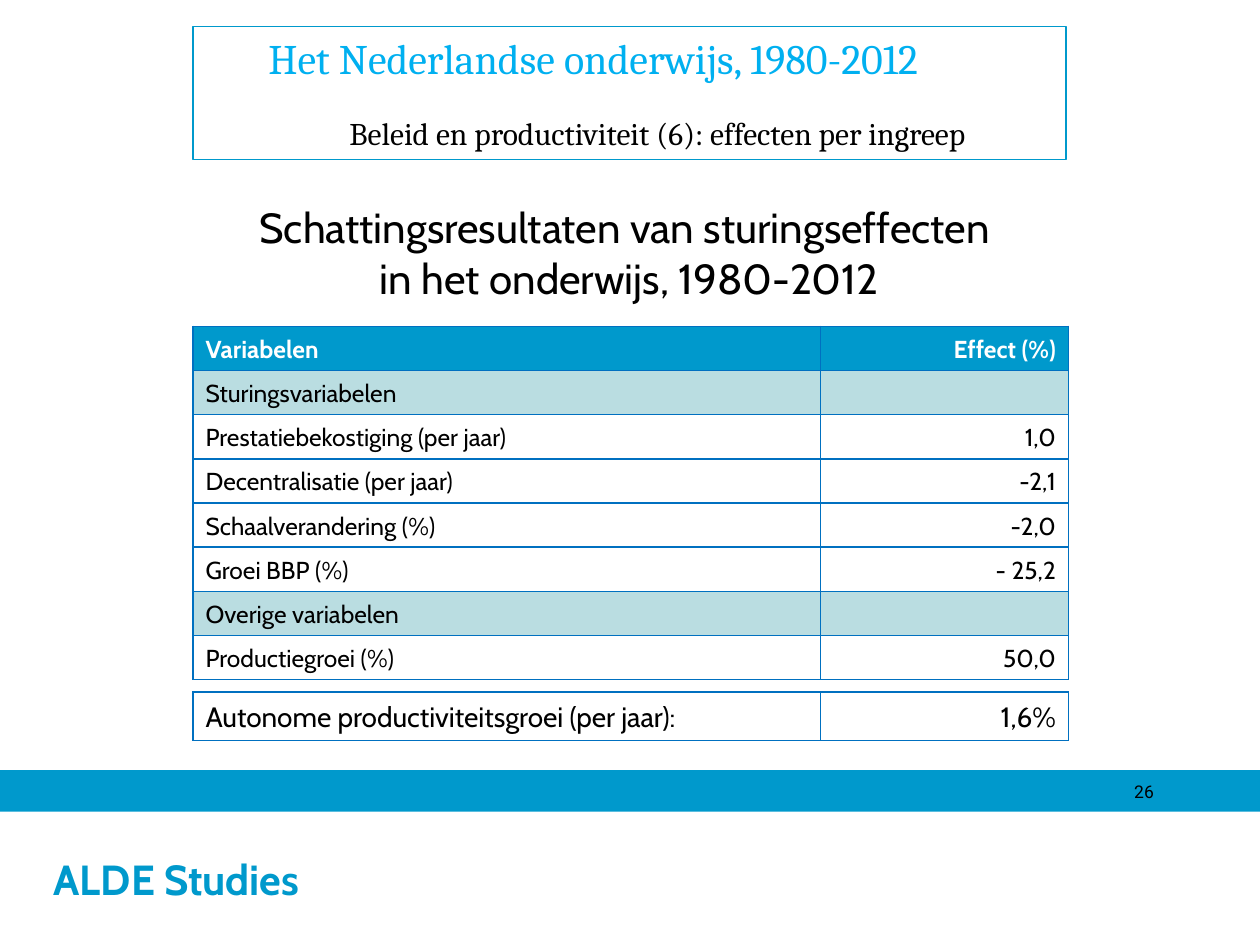
"""Build the slide on steering effects in Dutch education."""
from lxml import etree
from pptx import Presentation
from pptx.dml.color import RGBColor
from pptx.enum.shapes import MSO_SHAPE
from pptx.enum.text import MSO_ANCHOR, MSO_AUTO_SIZE, PP_ALIGN
from pptx.oxml.ns import qn
from pptx.util import Cm, Pt

RECTANGLE = MSO_SHAPE.RECTANGLE
MIDDLE, BOTTOM = MSO_ANCHOR.MIDDLE, MSO_ANCHOR.BOTTOM
LEFT, CENTER, RIGHT = PP_ALIGN.LEFT, PP_ALIGN.CENTER, PP_ALIGN.RIGHT
GROW = MSO_AUTO_SIZE.SHAPE_TO_FIT_TEXT

BLUE = RGBColor(0x00, 0x99, 0xCC)
SKY = RGBColor(0x00, 0xB0, 0xF0)
BORDER = RGBColor(0x00, 0x70, 0xC0)
PALE = RGBColor(0xBA, 0xDD, 0xE1)
BLACK = RGBColor(0x00, 0x00, 0x00)
WHITE = RGBColor(0xFF, 0xFF, 0xFF)

TITLE = "Het Nederlandse onderwijs, 1980-2012"
SUBTITLE = "Beleid en productiviteit (6): effecten per ingreep "
CAPTION = [
    "Schattingsresultaten van sturingseffecten ",
    "in het onderwijs, 1980-2012",
]
EFFECTS = [
    ("Variabelen", "Effect (%)"),
    ("Sturingsvariabelen", ""),
    ("Prestatiebekostiging (per jaar)", "1,0"),
    ("Decentralisatie (per jaar)", "-2,1"),
    ("Schaalverandering (%)", "-2,0"),
    ("Groei BBP (%)", "- 25,2"),
    ("Overige variabelen", ""),
    ("Productiegroei (%)", "50,0"),
]
GROWTH = [("Autonome productiviteitsgroei (per jaar):", "1,6%")]
INSTITUTE = "ALDE Studies"
PAGE = "26"

SLIDE_WIDTH, SLIDE_HEIGHT = 25.4, 19.05
CONTENT_LEFT, CONTENT_WIDTH = 3.89, 17.6
COLUMN_WIDTHS = (12.65, 5)


def add_run(paragraph, text, size, font, color, bold=False):
    run = paragraph.add_run()
    run.text = text
    run.font.size = Pt(size)
    run.font.name = font
    run.font.bold = bold
    run.font.color.rgb = color


def add_band(slide, top, height, color, outlined=True):
    shape = slide.shapes.add_shape(RECTANGLE, 0, Cm(top), Cm(SLIDE_WIDTH), Cm(height))
    shape.shadow.inherit = False
    shape.fill.solid()
    shape.fill.fore_color.rgb = color
    if outlined:
        shape.line.color.rgb = color
        shape.line.width = Pt(0.75)
    else:
        shape.line.fill.background()
    return shape


def add_text_box(slide, left, top, width, height):
    box = slide.shapes.add_textbox(Cm(left), Cm(top), Cm(width), Cm(height))
    box.text_frame.word_wrap = True
    return box


def set_borders(cell):
    properties = cell._tc.get_or_add_tcPr()
    for position, side in enumerate(("a:lnL", "a:lnR", "a:lnT", "a:lnB")):
        line = etree.Element(qn(side), w=str(Pt(1)))
        fill = etree.SubElement(line, qn("a:solidFill"))
        etree.SubElement(fill, qn("a:srgbClr"), val=str(BORDER))
        properties.insert(position, line)


def add_table(slide, rows, top, row_height, size, has_header):
    frame = slide.shapes.add_table(
        len(rows), len(COLUMN_WIDTHS), Cm(CONTENT_LEFT), Cm(top),
        Cm(sum(COLUMN_WIDTHS)), Cm(row_height * len(rows)))
    table = frame.table
    table.first_row = has_header
    table.horz_banding = False
    for column, width in zip(table.columns, COLUMN_WIDTHS):
        column.width = Cm(width)
    for row_index, values in enumerate(rows):
        table.rows[row_index].height = Cm(row_height)
        is_header = has_header and row_index == 0
        is_group = not values[1]
        for column_index, text in enumerate(values):
            cell = table.cell(row_index, column_index)
            cell.vertical_anchor = BOTTOM
            if is_header or is_group:
                cell.fill.solid()
                cell.fill.fore_color.rgb = BLUE if is_header else PALE
            else:
                cell.fill.background()
            set_borders(cell)
            if not text:
                cell.margin_top = cell.margin_bottom = 0
                continue
            paragraph = cell.text_frame.paragraphs[0]
            paragraph.alignment = RIGHT if column_index else LEFT
            paragraph.line_spacing = 1.07
            color = WHITE if is_header else BLACK
            add_run(paragraph, text, size, "Cabin", color, is_header)


def add_footer(slide):
    add_band(slide, 16.15, 0.79, BLUE)
    panel = add_band(slide, 16.36, SLIDE_HEIGHT - 16.36, WHITE, outlined=False)
    frame = panel.text_frame
    frame.vertical_anchor = MIDDLE
    frame.margin_left = Cm(1.08)
    frame.paragraphs[0].alignment = LEFT
    add_run(frame.paragraphs[0], INSTITUTE, 24, "Cabin", BLUE, True)
    add_band(slide, 15.54, 0.61, BLUE)
    number = add_text_box(slide, 17.98, 15.62, 5.28, 0.64).text_frame
    number.margin_left = number.margin_right = 0
    number.paragraphs[0].alignment = RIGHT
    add_run(number.paragraphs[0], PAGE, 10, "Roboto", BLACK)


def add_heading(slide):
    box = add_text_box(slide, CONTENT_LEFT, 0.53, CONTENT_WIDTH, 2.69)
    box.line.color.rgb = BLUE
    box.line.width = Pt(0.75)
    frame = box.text_frame
    frame.auto_size = GROW
    title, subtitle = frame.paragraphs[0], frame.add_paragraph()
    for paragraph in (title, subtitle):
        paragraph.level = 1
        paragraph.space_after = Pt(18)
        paragraph._p.get_or_add_pPr().set("marL", str(Cm(1.27)))
    subtitle.alignment = CENTER
    add_run(title, TITLE, 24, "Cambria", SKY)
    add_run(subtitle, SUBTITLE, 18, "Cambria", BLACK)


def add_caption(slide):
    frame = add_text_box(slide, CONTENT_LEFT, 3.94, CONTENT_WIDTH, 2.31).text_frame
    frame.auto_size = GROW
    for index, text in enumerate(CAPTION):
        paragraph = frame.add_paragraph() if index else frame.paragraphs[0]
        paragraph.alignment = CENTER
        add_run(paragraph, text, 24, "Cabin", BLACK)


def main():
    presentation = Presentation()
    presentation.slide_width = Cm(SLIDE_WIDTH)
    presentation.slide_height = Cm(SLIDE_HEIGHT)
    slide = presentation.slides.add_slide(presentation.slide_layouts[6])
    add_footer(slide)
    add_heading(slide)
    add_table(slide, EFFECTS, 6.58, 0.89, 14, has_header=True)
    add_caption(slide)
    add_table(slide, GROWTH, 13.95, 0.98, 16, has_header=False)
    presentation.save("out.pptx")


if __name__ == "__main__":
    main()
